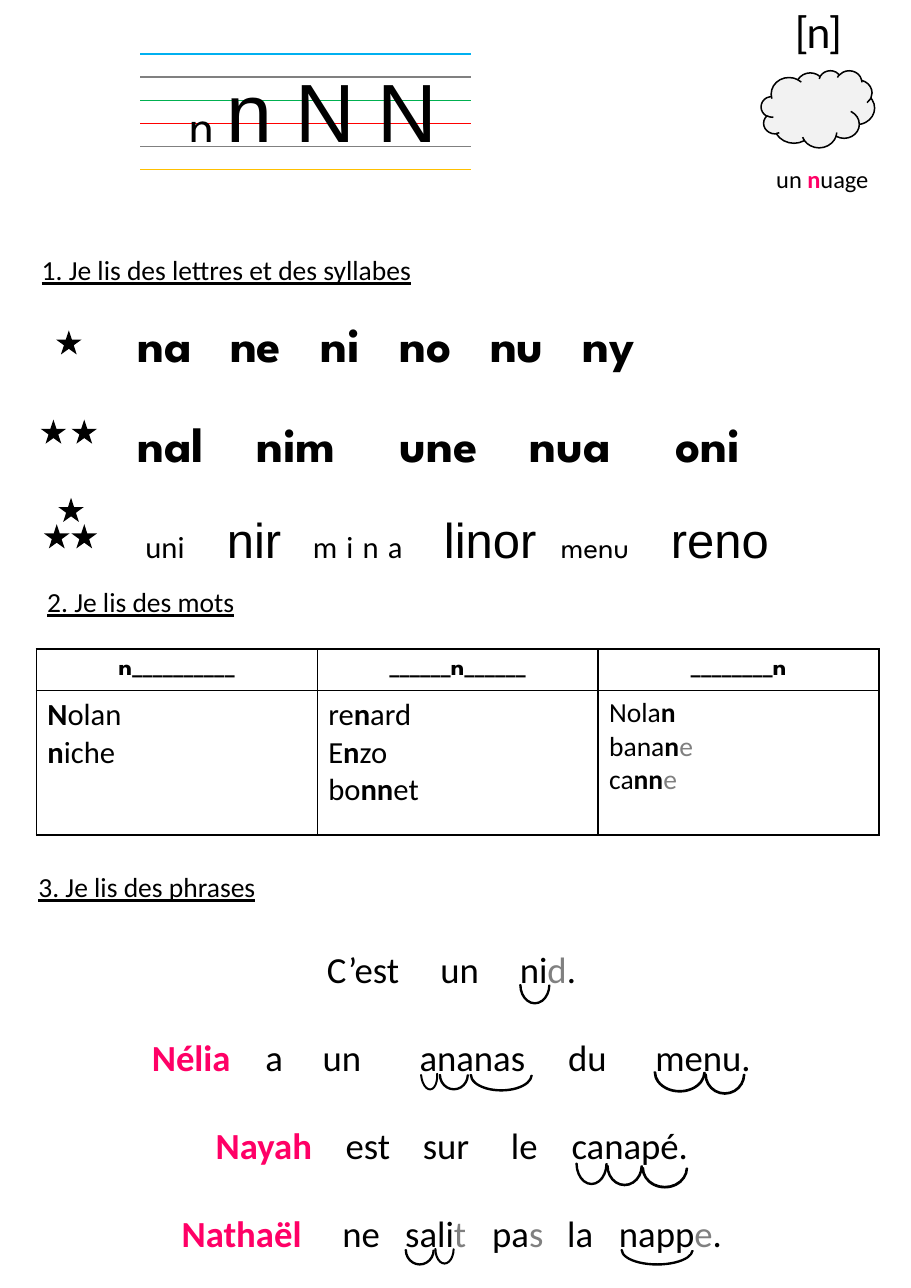
from lxml.etree import SubElement
from pptx import Presentation
from pptx.dml.color import RGBColor
from pptx.enum.shapes import MSO_SHAPE as Shape
from pptx.enum.text import MSO_ANCHOR as Anchor, PP_ALIGN as Align
from pptx.oxml.ns import qn
from pptx.util import Inches, Pt

BLACK = RGBColor(0x00, 0x00, 0x00)
WHITE = RGBColor(0xFF, 0xFF, 0xFF)
GREY = RGBColor(0x80, 0x80, 0x80)
CLOUD_GREY = RGBColor(0xF2, 0xF2, 0xF2)
PINK = RGBColor(0xFF, 0x00, 0x66)
BLUE = RGBColor(0x00, 0xB0, 0xF0)
GREEN = RGBColor(0x00, 0xB0, 0x50)
RED = RGBColor(0xFF, 0x00, 0x00)
YELLOW = RGBColor(0xFF, 0xC0, 0x00)

SYLLABLE_FONT = "League Spartan"
PLAIN = {}
BOLD = {"bold": True}
NAME = {"bold": True, "color": PINK}
SILENT = {"color": GREY}


def write(paragraph, text, size=18, font="Calibri", color=BLACK, bold=False,
          underline=False, spacing=None):
    run = paragraph.add_run()
    run.text = text
    run.font.size = Pt(size)
    run.font.name = font
    run.font.color.rgb = color
    run.font.bold = bold
    run.font.underline = underline
    if spacing:
        run.font._element.set("spc", str(spacing * 100))


def write_runs(paragraph, runs, **common):
    for text, style in runs:
        write(paragraph, text, **{**common, **style})


def set_tabs(paragraph, stops):
    tab_list = SubElement(paragraph._p.get_or_add_pPr(), qn("a:tabLst"))
    for stop in stops:
        SubElement(tab_list, qn("a:tab"), pos=str(Inches(stop)), algn="l")


def add_text_box(slide, left, top, width, height, runs, align=Align.LEFT, tabs=(), **common):
    box = slide.shapes.add_textbox(Inches(left), Inches(top), Inches(width), Inches(height))
    box.text_frame.word_wrap = True
    paragraph = box.text_frame.paragraphs[0]
    paragraph.alignment = align
    if tabs:
        set_tabs(paragraph, tabs)
    write_runs(paragraph, runs, **common)
    return box.text_frame


def add_heading(slide, left, top, text, height=0.4):
    return add_text_box(slide, left, top, 7.71, height, [(text, {"underline": True})])


def add_outlined(slide, kind, left, top, width, height, fill):
    shape = slide.shapes.add_shape(
        kind, Inches(left), Inches(top), Inches(width), Inches(height))
    shape.shadow.inherit = False
    shape.fill.solid()
    shape.fill.fore_color.rgb = fill
    shape.line.color.rgb = BLACK
    shape.line.width = Pt(1)
    return shape


def add_star(slide, left, top):
    star = add_outlined(slide, Shape.STAR_5_POINT, left, top, 0.19, 0.18, BLACK)
    SubElement(star.line._get_or_add_ln(), qn("a:miter"), lim="800000")


def add_arc(slide, left, top, width, height, rotation=180):
    """Draw the bowl that marks one syllable under a word."""
    arc = add_outlined(slide, Shape.BLOCK_ARC, left, top, width, height, WHITE)
    arc.rotation = rotation
    for index, value in enumerate((108.8, 0, 0.028)):
        arc.adjustments[index] = value


def add_plain_table(slide, left, top, widths, heights):
    """Add a table without banding or fills."""
    table = slide.shapes.add_table(
        len(heights), len(widths), Inches(left), Inches(top),
        Inches(sum(widths)), Inches(sum(heights))).table
    table.first_row = table.horz_banding = False
    for column, width in zip(table.columns, widths):
        column.width = Inches(width)
    for row, height in zip(table.rows, heights):
        row.height = Inches(height)
    for cell in table.iter_cells():
        cell.fill.background()
    return table


def add_borders(cell, **colors):
    """Set borders by side, named in the order L, R, T, B."""
    properties = cell._tc.get_or_add_tcPr()
    for index, (side, color) in enumerate(colors.items()):
        border = SubElement(properties, qn("a:ln" + side), w=str(Pt(1)))
        fill = SubElement(border, qn("a:solidFill"))
        SubElement(fill, qn("a:srgbClr"), val=str(color))
        properties.insert(index, border)


def add_letter_lines(slide, left, top, width):
    """Draw the coloured writing lines with the letter in its four forms."""
    spacing = 0.21
    colors = (BLUE, GREY, GREEN, RED, GREY, YELLOW)
    table = add_plain_table(slide, left, top, [width], [spacing] * len(colors))
    above = None
    for cell, color in zip(table.iter_cells(), colors):
        cell.margin_top = cell.margin_bottom = 0
        SubElement(cell.text_frame.paragraphs[0]._p, qn("a:endParaRPr"), sz="800")
        add_borders(cell, **({"T": above} if above else {}), B=color)
        above = color
    add_text_box(slide, left, top + spacing, width + 0.14, 1.01,
                 [("n ", {"size": 32, "font": SYLLABLE_FONT}), ("n N N", PLAIN)],
                 align=Align.CENTER, size=54, font="Arial")


def add_sound(slide, left, top):
    add_text_box(slide, left, top, 2.92, 0.57, [("[n]", PLAIN)],
                 align=Align.CENTER, size=28, font="Lato")
    add_outlined(slide, Shape.CLOUD, left + 0.94, top + 0.64, 1.03, 0.7, CLOUD_GREY)
    add_text_box(slide, left + 0.55, top + 1.44, 1.89, 0.37,
                 [("un ", PLAIN), ("n", NAME), ("uage", PLAIN)],
                 align=Align.CENTER, size=16)


def add_syllables(slide, left, top):
    """Place the three reading rows, each with its stars for difficulty."""
    table = add_plain_table(slide, left + 0.04, top + 0.48, [0.64, 6.9], [0.81] * 3)
    word_cell = table.cell(2, 1)
    word_cell.margin_top = Inches(0.32)
    paragraph = word_cell.text_frame.paragraphs[0]
    set_tabs(paragraph, (0.26, 1, 1.78, 2.97, 4.03, 5.03))
    large = {"size": 32, "font": "Arial"}
    words = [("\tuni\t", PLAIN), ("nir\t", large), ("mina", {"spacing": 6}),
             ("\tlinor\t", large), ("menu", {"font": SYLLABLE_FONT}), ("\treno", large)]
    write_runs(paragraph, words, size=20)

    add_heading(slide, left, top, "1. Je lis des lettres et des syllabes")
    stars = [(0.25, 0.77), (0.11, 1.58), (0.39, 1.58),
             (0.27, 2.29), (0.14, 2.53), (0.39, 2.53)]
    for x, y in stars:
        add_star(slide, left + x, top + y)

    rows = [(0.55, "na\tne\tni\tno\tnu\tny", (0.84, 1.66, 2.38, 3.2, 4.04)),
            (1.45, "nal\tnim\tune\tnua\toni", (1.08, 2.38, 3.56, 4.88))]
    for y, syllables, tabs in rows:
        add_text_box(slide, left + 0.87, top + y, 6.98, 0.64, [(syllables, BOLD)],
                     tabs=tabs, size=32, font=SYLLABLE_FONT)


def add_words(slide, left, top):
    """Sort words by where the letter stands: first, inside or last."""
    add_heading(slide, left, top, "2. Je lis des mots")
    columns = [
        ("n__________", 20, [[("N", BOLD), ("olan", PLAIN)],
                             [("n", BOLD), ("iche", PLAIN)]]),
        ("______n______", 20, [[("re", PLAIN), ("n", BOLD), ("ard", PLAIN)],
                               [("E", PLAIN), ("n", BOLD), ("zo", PLAIN)],
                               [("bo", PLAIN), ("nn", BOLD), ("et", PLAIN)]]),
        ("________n", 18, [[("Nola", PLAIN), ("n", BOLD)],
                           [("bana", PLAIN), ("n", BOLD), ("e", SILENT)],
                           [("ca", PLAIN), ("nn", BOLD), ("e", SILENT)]]),
    ]
    table = add_plain_table(slide, left, top + 0.63, [2.55] * len(columns), [0.38, 1.31])
    for cell in table.iter_cells():
        add_borders(cell, L=BLACK, R=BLACK, T=BLACK, B=BLACK)
    for index, (pattern, size, words) in enumerate(columns):
        header, text = table.cell(0, index), table.cell(1, index).text_frame
        header.vertical_anchor = Anchor.MIDDLE
        title = header.text_frame.paragraphs[0]
        title.alignment = Align.CENTER
        write(title, pattern, size=16, font=SYLLABLE_FONT, bold=True)
        for number, runs in enumerate(words):
            paragraph = text.add_paragraph() if number else text.paragraphs[0]
            write_runs(paragraph, runs, size=size)


def add_sentences(slide, left, top):
    text = add_heading(slide, left, top + 0.01, "3. Je lis des phrases", height=3.8)
    sentences = [
        ((2.62, 3.65, 4.37),
         [("\tC’est\tun\tni", PLAIN), ("d", SILENT), (".", PLAIN)]),
        ((1.03, 2.06, 2.58, 3.46, 4.81, 5.6),
         [("\tNélia", NAME), ("\ta\tun\tananas\tdu\tmenu.", PLAIN)]),
        ((1.61, 2.79, 3.49, 4.29, 4.84),
         [("\tNayah", NAME), ("\test\tsur\tle\tcanapé.", PLAIN)]),
        ((1.3, 2.76, 3.33, 4.12, 4.8, 5.27),
         [("\tNathaël", NAME), ("\tne\tsali", PLAIN), ("t", SILENT), ("\tpa", PLAIN),
          ("s", SILENT), ("\tla\tnapp", PLAIN), ("e", SILENT), (".", PLAIN)]),
    ]
    for tabs, runs in sentences:
        paragraph = text.add_paragraph()
        paragraph.space_before = Pt(28.65)
        set_tabs(paragraph, tabs)
        write_runs(paragraph, runs, size=24)

    arcs = [(4.47, 0.93, 0.27, 0.34),
            (3.57, 1.77, 0.15, 0.28, 175), (3.74, 1.78, 0.26, 0.27), (4.02, 1.77, 0.56, 0.29),
            (5.69, 1.71, 0.46, 0.36), (6.15, 1.73, 0.36, 0.36),
            (4.98, 2.53, 0.28, 0.38), (5.26, 2.56, 0.32, 0.36), (5.58, 2.58, 0.41, 0.36),
            (3.43, 3.37, 0.26, 0.27), (3.7, 3.36, 0.17, 0.27), (5.39, 3.37, 0.65, 0.27)]
    for x, y, *form in arcs:
        add_arc(slide, left + x, top + y, *form)


presentation = Presentation()
presentation.slide_width, presentation.slide_height = Inches(8.27), Inches(11.69)
page = presentation.slides.add_slide(presentation.slide_layouts[6])
add_letter_lines(page, 1.28, 0.28, 2.99)
add_sound(page, 5.97, 0)
add_syllables(page, 0.28, 2.25)
add_words(page, 0.33, 5.26)
add_sentences(page, 0.25, 7.84)
presentation.save("out.pptx")
